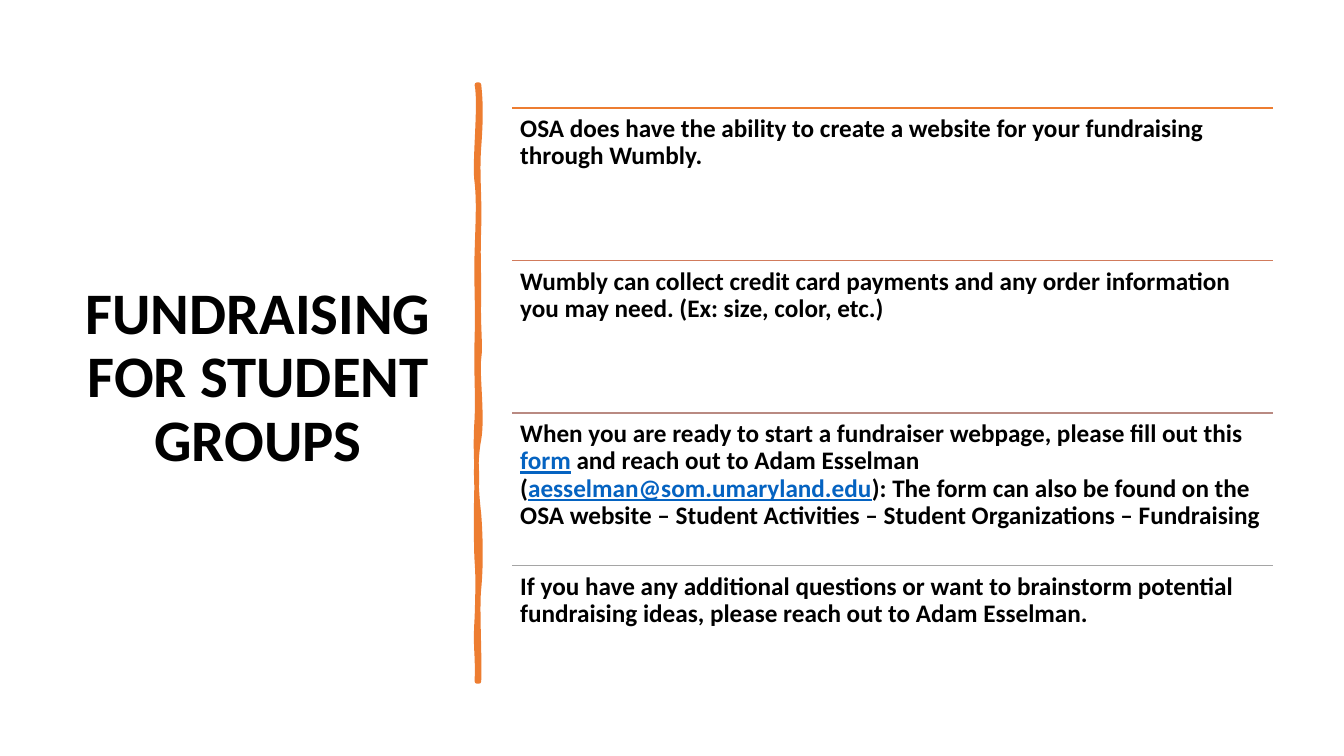
from lxml import etree
from pptx import Presentation
from pptx.dml.color import RGBColor
from pptx.enum.shapes import MSO_CONNECTOR
from pptx.enum.text import MSO_ANCHOR, PP_ALIGN
from pptx.oxml.ns import qn
from pptx.util import Inches, Pt

STRAIGHT = MSO_CONNECTOR.STRAIGHT
TOP, MIDDLE = MSO_ANCHOR.TOP, MSO_ANCHOR.MIDDLE
LEFT, CENTER = PP_ALIGN.LEFT, PP_ALIGN.CENTER

BLACK = RGBColor(0x00, 0x00, 0x00)
LINK_BLUE = RGBColor(0x05, 0x63, 0xC1)
ORANGE = RGBColor(0xED, 0x7D, 0x31)
TERRACOTTA = RGBColor(0xD1, 0x7B, 0x5C)
DUSTY_ROSE = RGBColor(0xB9, 0x8A, 0x82)
GRAY = RGBColor(0xA5, 0xA5, 0xA5)

PLAIN = {"name": "Calibri", "bold": True, "size": Pt(18)}
LINK = {**PLAIN, "underline": True}
HEADING = {**PLAIN, "size": Pt(42)}

# Each row: rule colour, then text pieces as (words, format, colour)
ROWS = [
    (ORANGE, [("OSA does have the ability to create a website for your "
               "fundraising through Wumbly.", PLAIN, BLACK)]),
    (TERRACOTTA, [("Wumbly can collect credit card payments and any order "
                   "information you may need. (Ex: size, color, etc.)",
                   PLAIN, BLACK)]),
    (DUSTY_ROSE, [
        ("When you are ready to start a fundraiser webpage, please fill out "
         "this ", PLAIN, BLACK),
        ("form", LINK, LINK_BLUE),
        (" and reach out to Adam Esselman (", PLAIN, BLACK),
        ("aesselman@som.umaryland.edu", LINK, LINK_BLUE),
        ("): The form can also be found on the OSA website – Student "
         "Activities – Student Organizations – Fundraising", PLAIN, BLACK),
    ]),
    (GRAY, [("If you have any additional questions or want to brainstorm "
             "potential fundraising ideas, please reach out to Adam "
             "Esselman.", PLAIN, BLACK)]),
]
ROW_LEFT, ROW_WIDTH = 5.08, 7.55
FIRST_TOP, LAST_TOP = 1.07, 5.61
ROW_HEIGHT = (LAST_TOP - FIRST_TOP) / (len(ROWS) - 1)

# Hand-drawn divider: start point, then curves (control, control, end)
DIVIDER_START = (4.75, 0.84)
DIVIDER_CURVES = [
    ((4.77, 1.02), (4.77, 1.19), (4.75, 1.46)),
    ((4.73, 1.73), (4.76, 1.95), (4.75, 2.26)),
    ((4.74, 2.57), (4.75, 2.62), (4.75, 2.94)),
    ((4.74, 3.25), (4.77, 3.42), (4.75, 3.56)),
    ((4.73, 3.70), (4.79, 4.14), (4.75, 4.36)),
    ((4.71, 4.57), (4.72, 4.84), (4.75, 5.10)),
    ((4.77, 5.36), (4.77, 5.64), (4.75, 5.84)),
    ((4.73, 6.03), (4.76, 6.50), (4.75, 6.76)),
    ((4.74, 6.76), (4.73, 6.76), (4.73, 6.76)),
    ((4.74, 6.46), (4.71, 6.44), (4.73, 6.13)),
    ((4.74, 5.83), (4.74, 5.70), (4.73, 5.57)),
    ((4.72, 5.44), (4.72, 4.95), (4.73, 4.77)),
    ((4.73, 4.59), (4.71, 4.45), (4.73, 4.15)),
    ((4.74, 3.86), (4.72, 3.73), (4.73, 3.35)),
    ((4.74, 2.98), (4.72, 2.81), (4.73, 2.50)),
    ((4.74, 2.18), (4.75, 2.00), (4.73, 1.81)),
    ((4.70, 1.63), (4.77, 1.04), (4.73, 0.84)),
]


def add_text(slide, box, pieces, inset, anchor=TOP, align=LEFT):
    """Place a wrapped paragraph made of formatted pieces."""
    frame = slide.shapes.add_textbox(*map(Inches, box)).text_frame
    margins = {f"margin_{side}": Inches(inset)
               for side in ("left", "top", "right", "bottom")}
    settings = {"word_wrap": True, "vertical_anchor": anchor, **margins}
    for attribute, value in settings.items():
        setattr(frame, attribute, value)
    paragraph = frame.paragraphs[0]
    paragraph.alignment = align
    paragraph.line_spacing = 0.9
    for words, style, color in pieces:
        run = paragraph.add_run()
        run.text = words
        for attribute, value in style.items():
            setattr(run.font, attribute, value)
        run.font.color.rgb = color


def add_rule(slide, top, color):
    """Draw the thin line above a row."""
    rule = slide.shapes.add_connector(
        STRAIGHT, Inches(ROW_LEFT), Inches(top),
        Inches(ROW_LEFT + ROW_WIDTH), Inches(top))
    rule.line.color.rgb = color
    rule.line.width = Pt(1)
    etree.SubElement(rule._element.spPr, qn("a:effectLst"))


def bend_segments(outline, curves):
    """Turn each straight segment of an outline into a cubic curve."""
    segments = list(outline._element.iter(qn("a:lnTo")))
    for segment, (first, second, _) in zip(segments, curves):
        segment.tag = qn("a:cubicBezTo")
        for position, (x, y) in enumerate((first, second)):
            control = etree.Element(qn("a:pt"),
                                    x=str(Inches(x) - outline.left),
                                    y=str(Inches(y) - outline.top))
            segment.insert(position, control)


def add_divider(slide):
    """Draw the wavy orange bar between title and rows."""
    builder = slide.shapes.build_freeform(*map(Inches, DIVIDER_START))
    builder.add_line_segments([tuple(map(Inches, end))
                               for _, _, end in DIVIDER_CURVES])
    divider = builder.convert_to_shape()
    bend_segments(divider, DIVIDER_CURVES)
    divider.shadow.inherit = False
    divider.fill.solid()
    divider.fill.fore_color.rgb = ORANGE
    divider.line.color.rgb = ORANGE
    divider.line.width = Pt(3.25)
    etree.SubElement(divider.line._get_or_add_ln(), qn("a:round"))


def main():
    deck = Presentation()
    deck.slide_width, deck.slide_height = Inches(13.33), Inches(7.5)
    slide = deck.slides.add_slide(deck.slide_layouts[6])

    # Title and divider
    add_text(slide, (0.69, 0.7, 3.74, 6.11),
             [("FUNDRAISING FOR STUDENT GROUPS", HEADING, BLACK)],
             0.1, MIDDLE, CENTER)
    add_divider(slide)

    # Ruled rows
    for index, (color, pieces) in enumerate(ROWS):
        top = FIRST_TOP + index * ROW_HEIGHT
        add_rule(slide, top, color)
        add_text(slide, (ROW_LEFT, top, ROW_WIDTH, ROW_HEIGHT), pieces, 0.08)

    deck.save("out.pptx")


if __name__ == "__main__":
    main()
